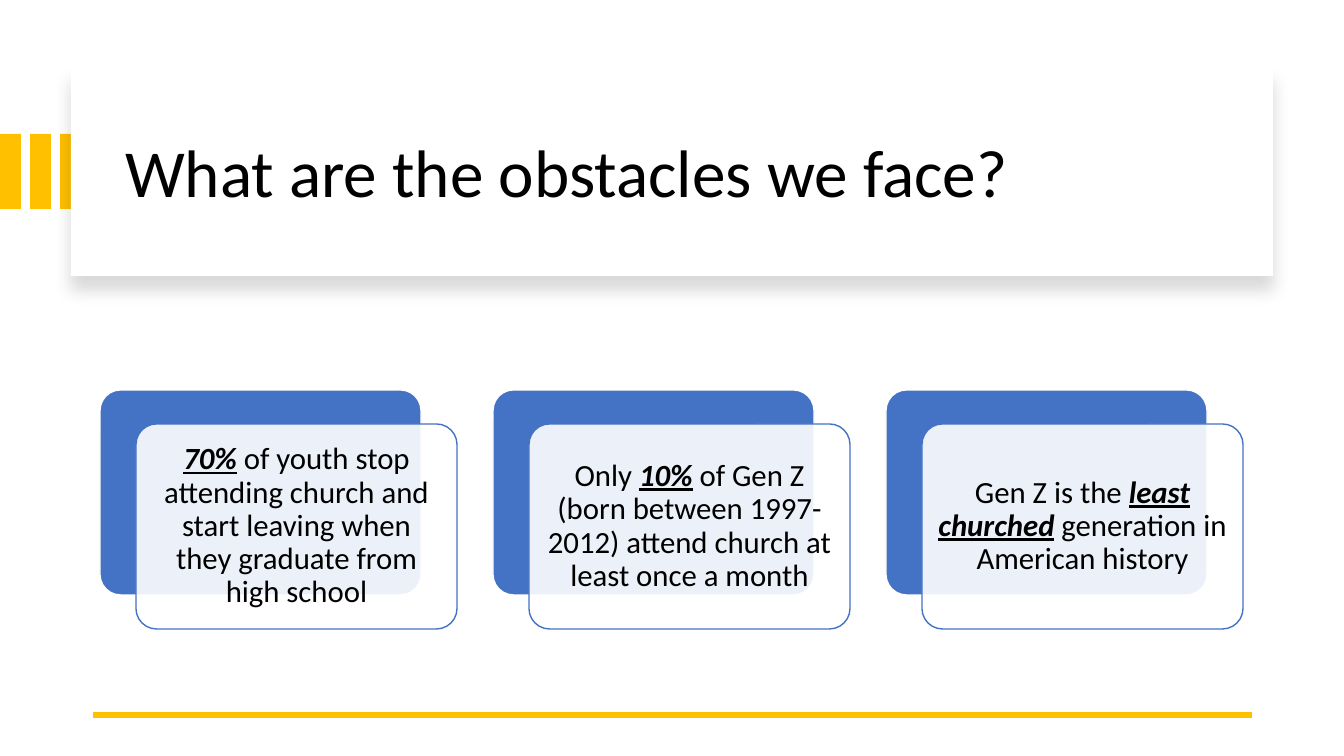
from lxml.etree import SubElement
from pptx import Presentation
from pptx.dml.color import RGBColor
from pptx.enum.shapes import MSO_CONNECTOR as Link, MSO_SHAPE as Kind
from pptx.enum.text import MSO_ANCHOR as Anchor, MSO_AUTO_SIZE as Fit, PP_ALIGN as Align
from pptx.oxml.ns import qn
from pptx.util import Pt

WIDTH, HEIGHT = 1344, 756
SCALE = 12192000 / WIDTH
GOLD = RGBColor(0xFF, 0xC0, 0x00)
BLUE = RGBColor(0x44, 0x72, 0xC4)
WHITE = RGBColor(0xFF, 0xFF, 0xFF)
BLACK = RGBColor(0x00, 0x00, 0x00)
FONT = "Calibri"

CARDS = [
    ("", "70%", " of youth stop attending church and start leaving when "
                "they graduate from high school"),
    ("Only ", "10%", " of Gen Z (born between 1997-2012) attend church at "
                     "least once a month"),
    ("Gen Z is the ", "least churched", " generation in American history"),
]


def px(*sizes):
    """Turn px lengths into EMU."""
    return [round(size * SCALE) for size in sizes]


def block(slide, kind, box, fill, edge=None):
    """Add a filled shape, with a thin outline if an edge colour is given."""
    shape = slide.shapes.add_shape(kind, *px(*box))
    shape.shadow.inherit = False
    shape.fill.solid()
    shape.fill.fore_color.rgb = fill
    if edge is None:
        shape.line.fill.background()
    else:
        shape.line.color.rgb = edge
        shape.line.width = Pt(1)
    if kind == Kind.ROUNDED_RECTANGLE:
        shape.adjustments[0] = 0.1
    return shape


def style(para, size, align):
    """Set the shared text look of a paragraph."""
    para.alignment = align
    para.line_spacing = 0.9
    para.font.name = FONT
    para.font.size = Pt(size)
    para.font.color.rgb = BLACK


def stripes(slide, box):
    """Draw three gold bars across the box."""
    left, top, width, height = box
    step = 30
    bar = width - 2 * step
    for i in range(3):
        block(slide, Kind.RECTANGLE, (left + i * step, top, bar, height), GOLD)


def header(slide, box, text):
    """Place the title on a white panel with a soft shadow."""
    left, top, width, height = box
    panel = block(slide, Kind.RECTANGLE, box, WHITE)
    effects = panel._element.spPr.find(qn("a:effectLst"))
    shade = SubElement(effects, qn("a:outerShdw"), blurRad=str(Pt(11)),
                       dist=str(Pt(10)), dir="5400000", algn="t", rotWithShape="0")
    color = SubElement(shade, qn("a:srgbClr"), val=str(BLACK))
    SubElement(color, qn("a:alpha"), val="15000")

    title = slide.shapes.title
    title.left, title.top, title.width, title.height = px(
        left + 44, top + 22, width - 80, height - 37)
    panel._element.addnext(title._element)
    frame = title.text_frame
    frame.text = text
    frame.auto_size = Fit.NONE
    frame.vertical_anchor = Anchor.MIDDLE
    style(frame.paragraphs[0], 48, Align.LEFT)


def rule(slide, left, right, y):
    """Draw the gold line at the foot."""
    line = slide.shapes.add_connector(Link.STRAIGHT, *px(right, y, left, y))
    line.line.color.rgb = GOLD
    line.line.width = Pt(4.5)
    SubElement(line._element.spPr, qn("a:effectLst"))


def card(slide, box, parts):
    """Draw a blue plate and a translucent card with its text."""
    left, top, width, height = box
    wide, high = width - 36, height - 34
    block(slide, Kind.ROUNDED_RECTANGLE, (left, top, wide, high), BLUE, WHITE)
    front = block(slide, Kind.ROUNDED_RECTANGLE,
                  (left + 36, top + 34, wide, high), WHITE, BLUE)
    tint = front._element.spPr.find(qn("a:solidFill"))[0]
    SubElement(tint, qn("a:alpha"), val="90000")

    frame = front.text_frame
    frame.word_wrap = True
    frame.vertical_anchor = Anchor.MIDDLE
    frame.margin_left, frame.margin_top = px(9, 9)
    frame.margin_right, frame.margin_bottom = px(9, 9)
    para = frame.paragraphs[0]
    style(para, 22, Align.CENTER)
    before, key, after = parts
    for text in filter(None, parts):
        run = para.add_run()
        run.text = text
        if text == key:
            run.font.bold = run.font.italic = run.font.underline = True


def cards(slide, box):
    """Spread the cards evenly over the box."""
    left, top, width, height = box
    wide = 357
    step = (width - wide) // (len(CARDS) - 1)
    for i, parts in enumerate(CARDS):
        card(slide, (left + i * step, top, wide, height), parts)


def main():
    """Build the slide and save it."""
    deck = Presentation()
    deck.slide_width, deck.slide_height = px(WIDTH, HEIGHT)
    slide = deck.slides.add_slide(deck.slide_layouts[5])
    stripes(slide, (0, 134, 81, 75))
    header(slide, (71, 68, 1202, 208), "What are the obstacles we face?")
    rule(slide, 93, 1252, 715)
    cards(slide, (100, 390, 1143, 239))
    deck.save("out.pptx")


if __name__ == "__main__":
    main()
